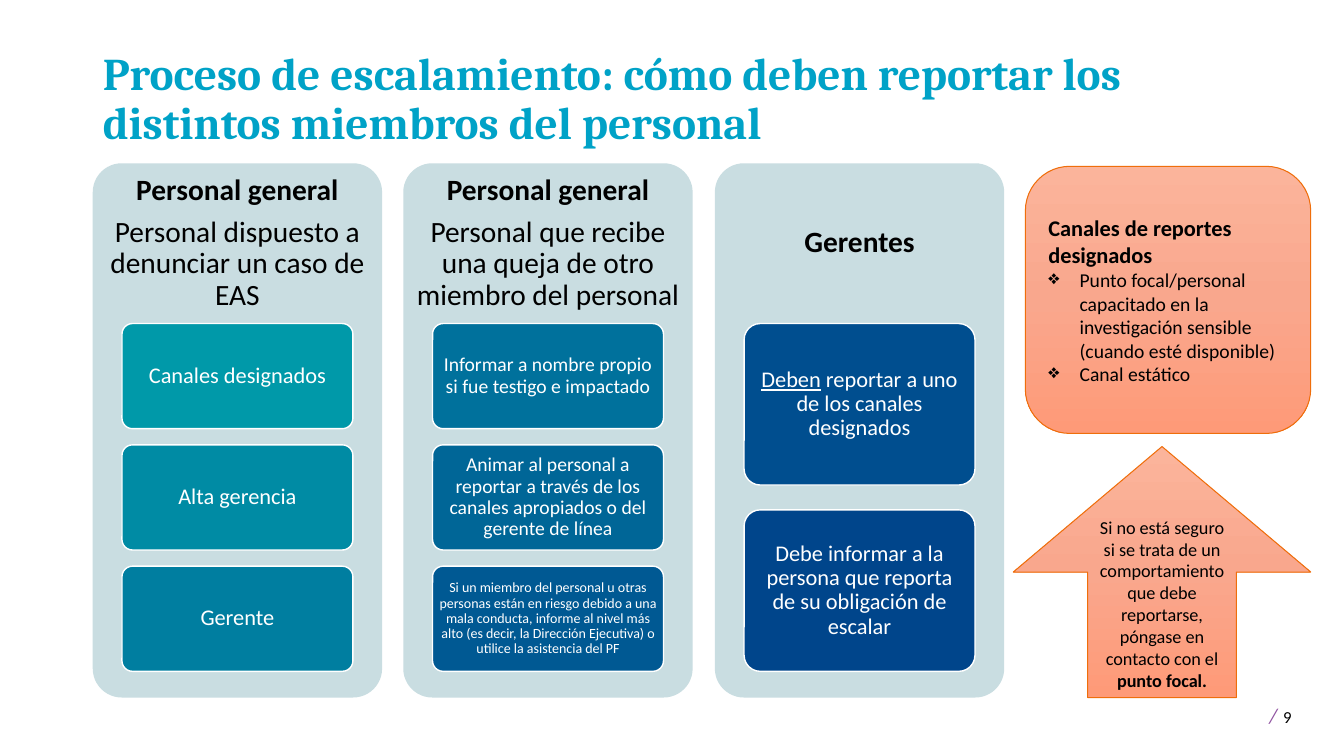
from copy import deepcopy
from dataclasses import dataclass

from lxml.etree import SubElement
from pptx import Presentation
from pptx.dml.color import RGBColor
from pptx.enum.shapes import MSO_SHAPE
from pptx.enum.text import MSO_ANCHOR, MSO_AUTO_SIZE, PP_ALIGN
from pptx.oxml.ns import qn
from pptx.util import Emu, Pt

# Text is a list of paragraphs; a paragraph is a list of (text, style) runs.
# Style letters: b bold, i italic, u underline.
TITLE = [[("Proceso de escalamiento: cómo deben reportar los distintos miembros del personal", "b")]]

# Each column: header, then steps as (fill, size name, runs)
COLUMNS = [
    ([[("Personal general", "b")], [("Personal dispuesto a denunciar un caso de EAS", "")]], [
        ("0099A9", "step", [("Canales designados", "")]),
        ("008BA4", "step", [("Alta gerencia", "")]),
        ("007EA0", "step", [("Gerente", "")]),
    ]),
    ([[("Personal general", "b")],
      [("Personal que recibe una queja de otro miembro del personal", "")]], [
        ("00719C", "detail", [("Informar a nombre propio si fue testigo e impactado", "")]),
        ("006697", "detail", [("Animar al personal a reportar a través de los canales "
                               "apropiados o del gerente de línea", "")]),
        ("005993", "small", [("Si un miembro del personal u otras personas están en riesgo debido "
                              "a una mala conducta, informe al nivel más alto (es decir, la "
                              "Dirección Ejecutiva) o utilice la asistencia del PF", "")]),
    ]),
    ([[("Gerentes", "b")]], [
        ("004E8F", "step", [("Deben", "u"), (" reportar a uno de los canales designados", "")]),
        ("00458B", "step", [("Debe informar a la persona que reporta de su obligación de escalar", "")]),
    ]),
]
CHANNELS_HEADING = [("Canales de reportes designados", "b")]
CHANNELS = [
    [("Punto focal/personal capacitado en la investigación sensible (cuando esté disponible)", "")],
    [("Canal estático", "")],
]
ADVICE = [[("Si no está seguro si se trata de un comportamiento que debe reportarse, "
            "póngase en contacto con el ", ""), ("punto focal.", "b")]]
PAGE_NUMBER = "9"


@dataclass(frozen=True)
class Theme:
    title: str = "00A2C7"
    panel: str = "C9DDE1"
    dark: str = "000000"
    light: str = "FFFFFF"
    slash: str = "9053A1"
    callout_line: str = "EF6E0B"
    callout_fill: tuple = ("FBB49B", "F9A78D", "FE9A78")
    heading_font: str = "Cambria"
    body_font: str = "Calibri"
    title_size: float = 32.4
    header_size: int = 21
    step_size: int = 16
    detail_size: int = 14
    advice_size: int = 13
    small_size: int = 10


THEME = Theme()
STEP_FORMATS = {  # size, margins in px
    "step": (THEME.step_size, (4, 3)),
    "detail": (THEME.detail_size, (4, 3)),
    "small": (THEME.small_size, (3, 2)),
}

# Lengths in px, 100 to the inch
PANEL_LEFT, PANEL_TOP, PANEL_WIDTH, PANEL_HEIGHT = 92, 162, 287, 530
PANEL_SPAN = 617  # first panel's left edge to the last one's
HEADER_HEIGHT = 159
STEP_INDENT, STEPS_HEIGHT = 29, 345
STEP_WIDTH = PANEL_WIDTH - 2 * STEP_INDENT
GAP_RATIO = 2 / 13  # gap between steps, as a share of step height
BULLET_INDENT = 31


def px(length):
    return Emu(round(length * 9144))


def rgb(code):
    return RGBColor.from_string(code)


def add_bullet(para):
    properties = para._p.get_or_add_pPr()
    properties.set("marL", str(px(BULLET_INDENT)))
    properties.set("indent", str(-px(BULLET_INDENT)))
    color = SubElement(properties, qn("a:buClr"))
    SubElement(color, qn("a:srgbClr"), val=THEME.dark)
    SubElement(properties, qn("a:buChar"), char="❖")


def add_span(para, text, style="", *, size, color=THEME.dark, font=THEME.body_font):
    span = para.add_run()
    span.text = text
    span.font.name, span.font.size = font, Pt(size)
    span.font.color.rgb = rgb(color)
    span.font.bold = "b" in style
    span.font.italic = "i" in style
    span.font.underline = "u" in style


def write(box, paragraphs, *, size, color=THEME.dark, font=THEME.body_font, align=PP_ALIGN.CENTER,
          anchor=MSO_ANCHOR.MIDDLE, margins=(10, 5), spacing=1.0, before=0):
    frame = box.text_frame
    frame.word_wrap = True
    frame.auto_size = MSO_AUTO_SIZE.NONE
    frame.vertical_anchor = anchor
    frame.margin_left = frame.margin_right = px(margins[0])
    frame.margin_top = frame.margin_bottom = px(margins[1])
    for index, runs in enumerate(paragraphs):
        para = frame.add_paragraph() if index else frame.paragraphs[0]
        para.alignment, para.line_spacing = align, spacing
        if index and before:
            para.space_before = Pt(before)
        for text, style in runs:
            add_span(para, text, style, size=size, color=color, font=font)
    return frame


def add_box(page, kind, place, *, fill=None, line=None, width=1, corner=None):
    box = page.shapes.add_shape(kind, *map(px, place))
    box.shadow.inherit = False
    if corner:
        box.adjustments[0] = corner
    if fill:
        box.fill.solid()
        box.fill.fore_color.rgb = rgb(fill)
    if line:
        box.line.color.rgb = rgb(line)
        box.line.width = Pt(width)
    else:
        box.line.fill.background()
    return box


def add_callout(page, kind, place):
    """Add an orange shape shaded from top to bottom."""
    box = add_box(page, kind, place, line=THEME.callout_line, width=0.75)
    box.fill.gradient()
    box.fill.gradient_angle = 270
    stops = box._element.spPr.find(qn("a:gradFill")).find(qn("a:gsLst"))
    stops.insert(1, deepcopy(stops[0]))
    for index, (stop, color) in enumerate(zip(box.fill.gradient_stops, THEME.callout_fill)):
        stop.position = index / 2
        stop.color.rgb = rgb(color)
    return box


def add_column(page, left, header, steps):
    add_box(page, MSO_SHAPE.ROUNDED_RECTANGLE, (left, PANEL_TOP, PANEL_WIDTH, PANEL_HEIGHT),
            fill=THEME.panel, corner=0.1)
    caption = page.shapes.add_textbox(*map(px, (left, PANEL_TOP, PANEL_WIDTH, HEADER_HEIGHT)))
    write(caption, header, size=THEME.header_size, margins=(9, 9), spacing=0.9, before=7.3)
    height = STEPS_HEIGHT / (len(steps) + (len(steps) - 1) * GAP_RATIO)
    for row, (fill, size_name, runs) in enumerate(steps):
        top = PANEL_TOP + HEADER_HEIGHT + row * height * (1 + GAP_RATIO)
        box = add_box(page, MSO_SHAPE.ROUNDED_RECTANGLE, (left + STEP_INDENT, top, STEP_WIDTH, height),
                      fill=fill, line=THEME.light, corner=0.1)
        size, margins = STEP_FORMATS[size_name]
        write(box, [runs], size=size, color=THEME.light, margins=margins, spacing=0.9)


def main():
    deck = Presentation()
    deck.slide_width, deck.slide_height = px(1333), px(750)
    page = deck.slides.add_slide(deck.slide_layouts[5])

    title = page.shapes.title
    title.left, title.top, title.width, title.height = map(px, (92, 40, 1150, 113))
    write(title, TITLE, size=THEME.title_size, color=THEME.title, font=THEME.heading_font,
          align=PP_ALIGN.LEFT, anchor=MSO_ANCHOR.BOTTOM, spacing=0.9)

    for index, (header, steps) in enumerate(COLUMNS):
        left = PANEL_LEFT + PANEL_SPAN * index // (len(COLUMNS) - 1)
        add_column(page, left, header, steps)

    channels = add_callout(page, MSO_SHAPE.ROUNDED_RECTANGLE, (1017, 165, 283, 265))
    frame = write(channels, [CHANNELS_HEADING], size=THEME.step_size, align=PP_ALIGN.LEFT)
    for runs in CHANNELS:
        para = frame.add_paragraph()
        add_bullet(para)
        para.alignment = PP_ALIGN.LEFT
        for text, style in runs:
            add_span(para, text, style, size=THEME.detail_size)

    arrow = add_callout(page, MSO_SHAPE.UP_ARROW, (1005, 443, 295, 249))
    write(arrow, ADVICE, size=THEME.advice_size)

    number = page.shapes.add_textbox(*map(px, (1243, 688, 87, 40)))
    frame = write(number, [], size=12, margins=(16, 5), anchor=MSO_ANCHOR.TOP)
    para = frame.paragraphs[0]
    add_span(para, "/", "i", size=15, color=THEME.slash)
    add_span(para, " ", size=18)
    add_span(para, PAGE_NUMBER, size=12)

    deck.save("out.pptx")


if __name__ == "__main__":
    main()
